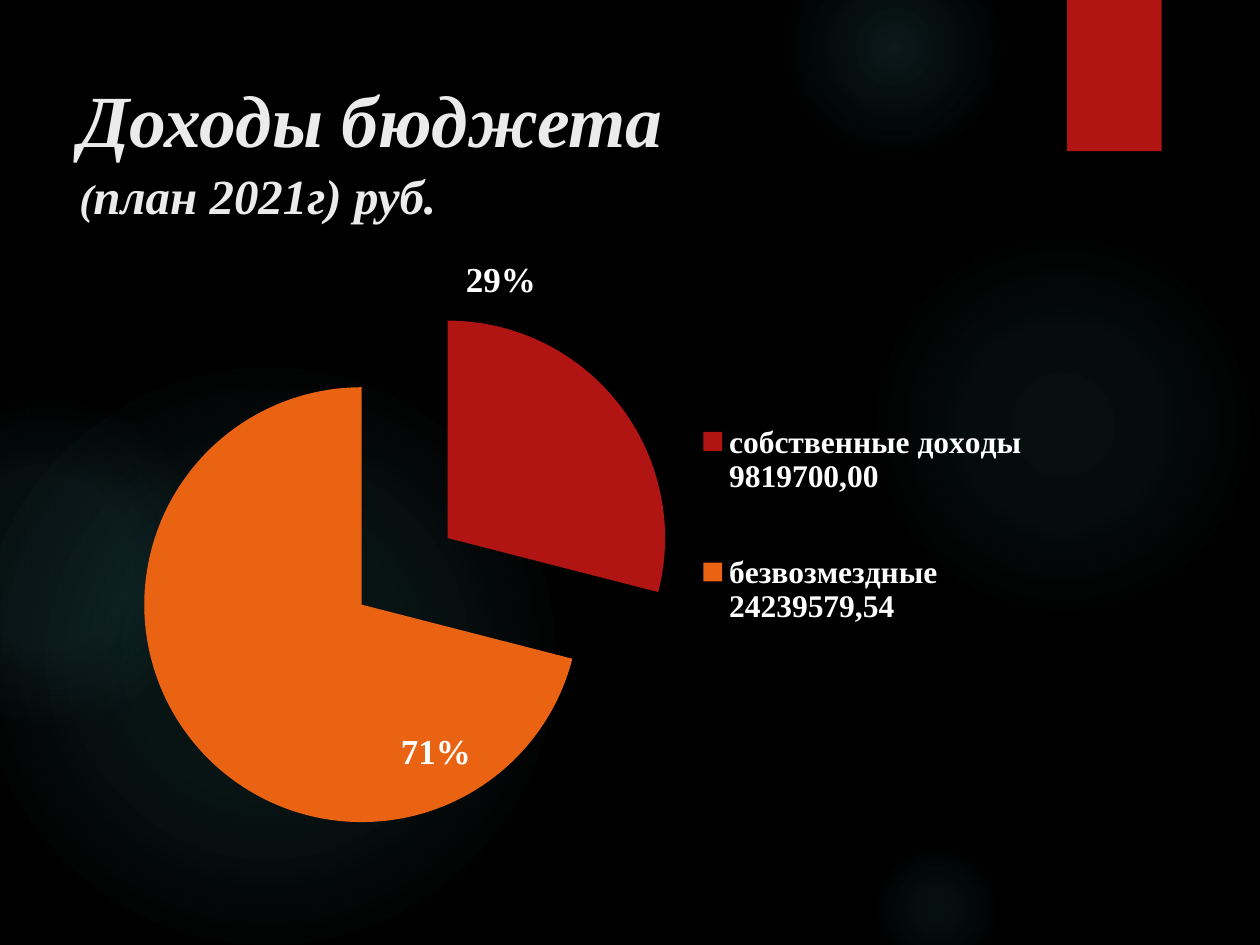
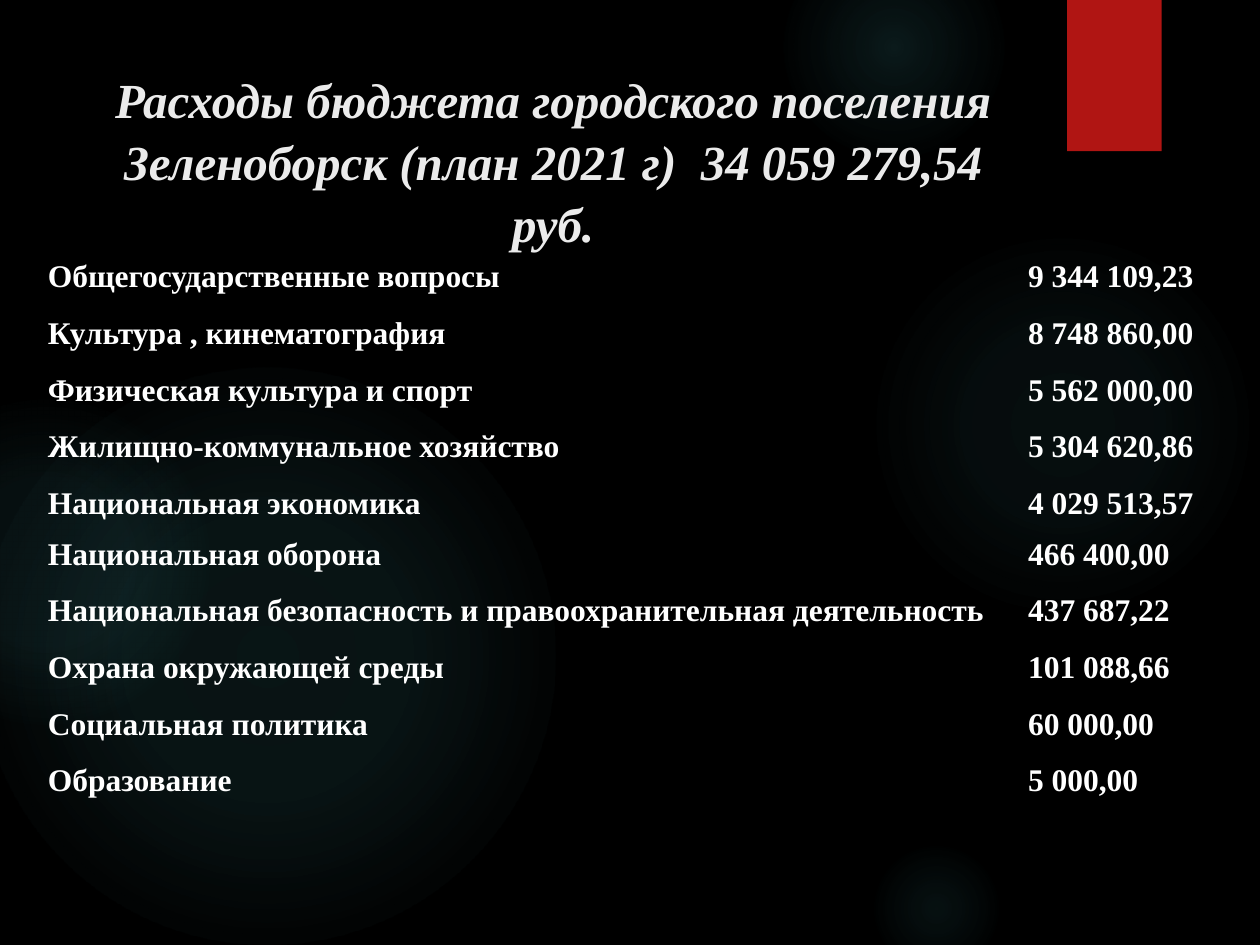
"""Build two budget slides: an income pie and an expenses table."""
import dataclasses

import pptx
import pptx.chart.data
import pptx.dml.color
import pptx.enum.chart
import pptx.enum.shapes
import pptx.enum.text
import pptx.oxml
import pptx.oxml.ns
import pptx.util

Inches = pptx.util.Inches
Pt = pptx.util.Pt
Align = pptx.enum.text.PP_ALIGN
Anchor = pptx.enum.text.MSO_ANCHOR
ShapeKind = pptx.enum.shapes.MSO_SHAPE


@dataclasses.dataclass(frozen=True)
class Theme:
    background: str = "000000"
    glow: str = "50B9C1"
    red: str = "B01513"
    orange: str = "EA6312"
    title: str = "EBEBEB"
    text: str = "FFFFFF"
    font: str = "Times New Roman"
    chart_font: str = "Quicksand"
    heading_size: int = 42
    subheading_size: int = 28
    bracket_size: int = 24
    label_size: int = 20
    body_size: int = 18


@dataclasses.dataclass(frozen=True)
class Glow:
    left: float
    top: float
    diameter: float
    stops: tuple[tuple[int, int], ...]


@dataclasses.dataclass(frozen=True)
class TitleSpan:
    text: str
    size: int
    breaks_after: bool = False


@dataclasses.dataclass(frozen=True)
class Label:
    text: str
    left: float
    top: float
    width: float
    height: float


@dataclasses.dataclass(frozen=True)
class Share:
    category: str
    percent: int
    color: str


@dataclasses.dataclass(frozen=True)
class Expense:
    name: str
    amount: str
    height: float = 0.45


THEME = Theme()

GLOWS = (
    Glow(6.89, 1.83, 3.08, ((0, 7), (36, 6), (69, 0))),
    Glow(6.22, -0.5, 1.75, ((0, 14), (36, 7), (73, 0))),
    Glow(6.89, 6.67, 1.08, ((0, 9), (36, 5), (66, 0))),
    Glow(-0.17, 2.92, 4.58, ((0, 11), (36, 10), (75, 0))),
    Glow(-0.92, 3.17, 2.58, ((0, 8), (36, 8), (72, 0))),
)

INCOME_TITLE = (
    TitleSpan("Доходы бюджета ", THEME.heading_size, True),
    TitleSpan("(", THEME.bracket_size),
    TitleSpan("план 2021г) руб.", THEME.subheading_size),
)
EXPENSE_TITLE = (
    TitleSpan(
        "Расходы бюджета городского поселения Зеленоборск (план 2021 г)  34 059 279,54 руб.",
        THEME.subheading_size,
    ),
)

SHARES = (
    Share("собственные доходы 9819700,00", 29, THEME.red),
    Share("безвозмездные 24239579,54", 71, THEME.orange),
)
SHARE_LABELS = (
    Label("29%", 3.58, 1.94, 0.79, 0.54),
    Label("71%", 2.95, 5.72, 1.02, 0.47),
)

EXPENSES = (
    Expense("Общегосударственные вопросы", "9 344 109,23"),
    Expense("Культура , кинематография", "8 748 860,00"),
    Expense("Физическая культура и спорт", "5 562 000,00"),
    Expense("Жилищно-коммунальное хозяйство", "5 304 620,86"),
    Expense("Национальная экономика", "4 029 513,57", 0.4),
    Expense("Национальная оборона", "466 400,00"),
    Expense("Национальная безопасность и правоохранительная деятельность", "437 687,22"),
    Expense("Охрана окружающей среды", "101 088,66"),
    Expense("Социальная политика", "60 000,00"),
    Expense("Образование", "5 000,00"),
)
COLUMN_WIDTHS = (7.78, 1.63)
NO_GRID_STYLE = "{2D5ABB26-0587-4C30-8999-92F81FD0307C}"


def rgb(color: str) -> pptx.dml.color.RGBColor:
    return pptx.dml.color.RGBColor.from_string(color)


def drawing_xml(xml: str):
    """Parse markup whose root element gets the drawing namespace."""
    head, rest = xml.split(" ", 1)
    return pptx.oxml.parse_xml(f"{head} {pptx.oxml.ns.nsdecls('a')} {rest}")


def style_font(font, size: int, color: str, italic: bool = False) -> None:
    font.name = THEME.font
    font.size = Pt(size)
    font.bold = True
    font.italic = italic
    font.color.rgb = rgb(color)


def add_plain_shape(page, kind, left: float, top: float, width: float, height: float):
    shape = page.shapes.add_shape(kind, Inches(left), Inches(top), Inches(width), Inches(height))
    shape.shadow.inherit = False
    shape.line.fill.background()
    return shape


def add_glow(page, glow: Glow):
    shape = add_plain_shape(
        page, ShapeKind.OVAL, glow.left, glow.top, glow.diameter, glow.diameter
    )
    stops = "".join(
        f'<a:gs pos="{place * 1000}"><a:srgbClr val="{THEME.glow}">'
        f'<a:alpha val="{opacity * 1000}"/></a:srgbClr></a:gs>'
        for place, opacity in glow.stops
    )
    gradient = drawing_xml(
        f'<a:gradFill rotWithShape="1"><a:gsLst>{stops}</a:gsLst><a:path path="circle">'
        '<a:fillToRect l="50000" t="50000" r="50000" b="50000"/></a:path></a:gradFill>'
    )
    shape.fill.background()
    properties = shape.element.spPr
    properties.replace(properties.find(pptx.oxml.ns.qn("a:noFill")), gradient)
    return shape


def add_ribbon(page):
    shape = add_plain_shape(page, ShapeKind.RECTANGLE, 8.47, 0, 0.75, 1.2)
    shape.fill.solid()
    shape.fill.fore_color.rgb = rgb(THEME.red)
    shadow = drawing_xml(
        f'<a:outerShdw blurRad="{Pt(3)}" dist="{Pt(2)}" dir="5400000" rotWithShape="0">'
        '<a:srgbClr val="000000"><a:alpha val="45000"/></a:srgbClr></a:outerShdw>'
    )
    shape.element.spPr.find(pptx.oxml.ns.qn("a:effectLst")).append(shadow)
    return shape


def decorate_layout(deck, layout, page) -> None:
    """Set the shared background and move the decoration behind the layout title."""
    fill = deck.slide_master.background.fill
    fill.solid()
    fill.fore_color.rgb = rgb(THEME.background)
    for holder in list(layout.placeholders):
        if holder.placeholder_format.idx:
            holder.element.getparent().remove(holder.element)
    title = layout.placeholders[0].element
    for shape in [add_glow(page, glow) for glow in GLOWS] + [add_ribbon(page)]:
        title.addprevious(shape.element)


def set_title(page, spans: tuple[TitleSpan, ...], align, bottom_inset: float = 0.05) -> None:
    title = page.shapes.title
    title.left, title.top = Inches(0.53), Inches(0.5)
    title.width, title.height = Inches(7.72), Inches(1.53)
    frame = title.text_frame
    frame.auto_size = pptx.enum.text.MSO_AUTO_SIZE.NONE
    frame.word_wrap = True
    frame.vertical_anchor = Anchor.MIDDLE
    frame.margin_bottom = Inches(bottom_inset)
    para = frame.paragraphs[0]
    para.alignment = align
    para.line_spacing = 1.05
    for part in spans:
        span = para.add_run()
        span.text = part.text
        style_font(span.font, part.size, THEME.title, italic=True)
        if part.breaks_after:
            para.add_line_break()


def add_label(page, label: Label) -> None:
    box = page.shapes.add_textbox(
        Inches(label.left), Inches(label.top), Inches(label.width), Inches(label.height)
    )
    frame = box.text_frame
    frame.word_wrap = True
    frame.vertical_anchor = Anchor.MIDDLE
    frame.text = label.text
    para = frame.paragraphs[0]
    para.alignment = Align.CENTER
    style_font(para.runs[0].font, THEME.label_size, THEME.text)


def manual_layout(left: float, top: float, width: float, height: float, inner: bool = False):
    target = '<c:layoutTarget val="inner"/>' if inner else ""
    return pptx.oxml.parse_xml(
        f"<c:layout {pptx.oxml.ns.nsdecls('c')}><c:manualLayout>{target}"
        '<c:xMode val="edge"/><c:yMode val="edge"/>'
        f'<c:x val="{left}"/><c:y val="{top}"/><c:w val="{width}"/><c:h val="{height}"/>'
        "</c:manualLayout></c:layout>"
    )


def place_part(part, layout, position: int) -> None:
    """Give a chart part its manual layout in place of any automatic one."""
    for automatic in part.findall(pptx.oxml.ns.qn("c:layout")):
        part.remove(automatic)
    part.insert(position, layout)


def add_income_pie(page) -> None:
    data = pptx.chart.data.CategoryChartData()
    data.categories = [share.category for share in SHARES]
    data.add_series("Series 1", [share.percent for share in SHARES])
    chart = page.shapes.add_chart(
        pptx.enum.chart.XL_CHART_TYPE.PIE_EXPLODED,
        Inches(0.9), Inches(2.24), Inches(7.34), Inches(4.59), data,
    ).chart
    chart.has_title = False
    chart.font.name = THEME.chart_font
    chart.font.size = Pt(THEME.body_size)
    chart.font.color.rgb = rgb(THEME.text)
    chart.has_legend = True
    chart.legend.position = pptx.enum.chart.XL_LEGEND_POSITION.RIGHT
    chart.legend.include_in_layout = False
    style_font(chart.legend.font, THEME.body_size, THEME.text)
    plot = chart.plots[0]
    plot.vary_by_categories = True
    series = plot.series[0]
    for index, share in enumerate(SHARES):
        fill = series.points[index].format.fill
        fill.solid()
        fill.fore_color.rgb = rgb(share.color)
    for explosion in chart.element.iter(pptx.oxml.ns.qn("c:explosion")):
        explosion.set("val", "25")
    area = chart.element.find(".//" + pptx.oxml.ns.qn("c:plotArea"))
    place_part(area, manual_layout(0.02, 0.03, 0.59, 0.94, inner=True), 0)
    place_part(chart.legend.element if hasattr(chart.legend, "element") else
               chart.element.find(".//" + pptx.oxml.ns.qn("c:legend")),
               manual_layout(0.62, 0.14, 0.38, 0.56), 1)


def add_expense_table(page) -> None:
    frame = page.shapes.add_table(
        len(EXPENSES), len(COLUMN_WIDTHS), Inches(0.31), Inches(2.02),
        Inches(sum(COLUMN_WIDTHS)), Inches(sum(expense.height for expense in EXPENSES)),
    )
    table = frame.table
    table.first_row = table.horz_banding = False
    frame.element.find(".//" + pptx.oxml.ns.qn("a:tableStyleId")).text = NO_GRID_STYLE
    for column, width in zip(table.columns, COLUMN_WIDTHS):
        column.width = Inches(width)
    for row, expense in zip(table.rows, EXPENSES):
        row.height = Inches(expense.height)
        for cell, text in zip(row.cells, (expense.name, expense.amount)):
            cell.fill.background()
            cell.margin_left = cell.margin_right = Inches(0.07)
            cell.margin_top = cell.margin_bottom = Inches(0)
            cell.text_frame.text = text
            para = cell.text_frame.paragraphs[0]
            para.line_spacing = 1.15
            style_font(para.runs[0].font, THEME.body_size, THEME.text)


def main() -> None:
    deck = pptx.Presentation()
    deck.slide_width, deck.slide_height = Inches(10), Inches(7.5)
    layout = deck.slide_layouts[5]

    income = deck.slides.add_slide(layout)
    decorate_layout(deck, layout, income)
    set_title(income, INCOME_TITLE, Align.LEFT, bottom_inset=0.25)
    add_income_pie(income)
    for label in SHARE_LABELS:
        add_label(income, label)

    expenses = deck.slides.add_slide(layout)
    set_title(expenses, EXPENSE_TITLE, Align.CENTER)
    add_expense_table(expenses)

    deck.save("out.pptx")


if __name__ == "__main__":
    main()
